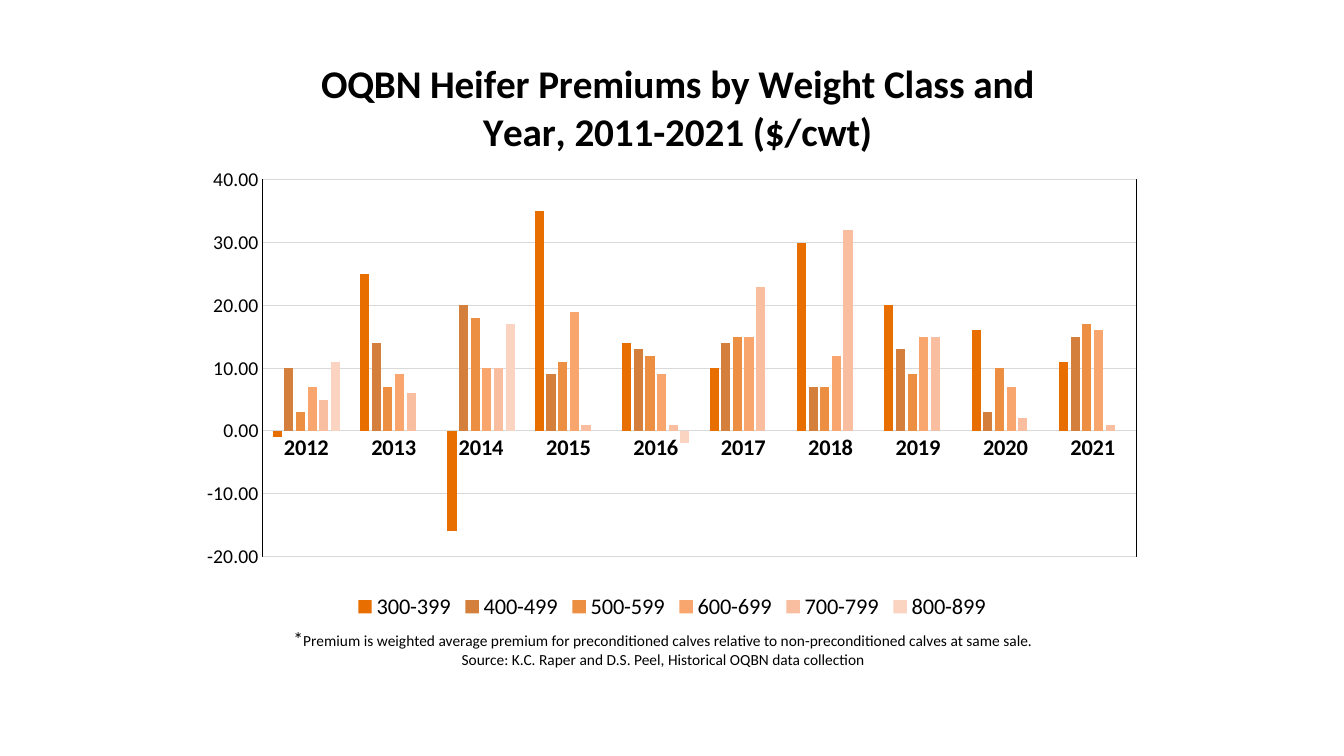
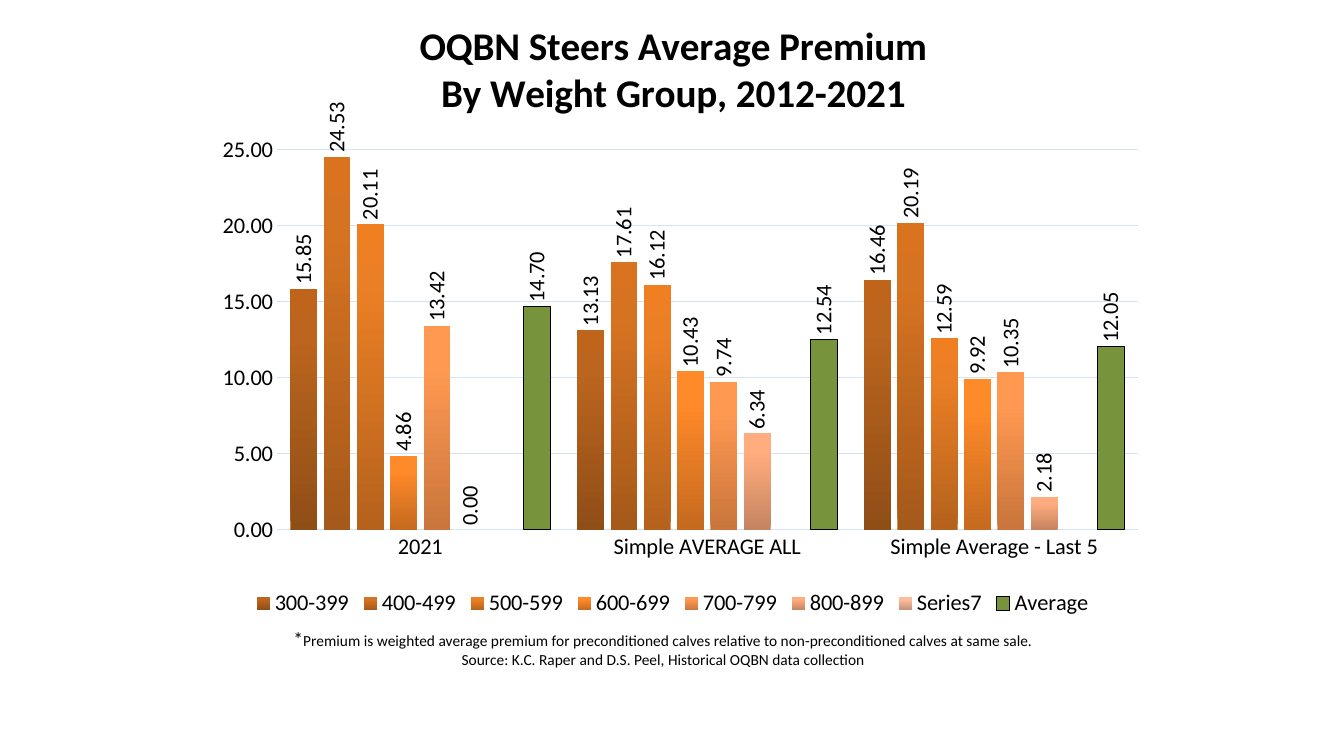
from pptx import Presentation
from pptx import util as u
from pptx.chart.data import CategoryChartData
from pptx.dml.color import RGBColor
from pptx.enum import chart as ch, text
from pptx.oxml import parse_xml
from pptx.oxml.ns import nsdecls, qn

W, H = u.Inches(13.33), u.Inches(7.5)
FONT, BLACK = "Calibri", "000000"
NOTE = ("Premium is weighted average premium for preconditioned calves "
        "relative to non-preconditioned calves at same sale.")
SOURCE = "Source: K.C. Raper and D.S. Peel, Historical OQBN data collection"

# Series: name, values, colour (three colours make a gradient, bottom to top)
HEIFERS = [
    ("300-399", (-1, 25, -16, 35, 14, 10, 30, 20, 16, 11), "E96E00"),
    ("400-499", (10, 14, 20, 9, 13, 14, 7, 13, 3, 15), "D4803C"),
    ("500-599", (3, 7, 18, 11, 12, 15, 7, 9, 10, 17), "EC8F43"),
    ("600-699", (7, 9, 10, 19, 9, 15, 12, 15, 7, 16), "F8A56E"),
    ("700-799", (5, 6, 10, 1, 1, 23, 32, 15, 2, 1), "F9BE9F"),
    ("800-899", (11, None, 17, 0, -2, None, 0, 0, None, None), "FBD3C1"),
]
STEERS = [
    ("300-399", (15.85, 13.13, 16.46), ("904E17", "BB651E", "BF651B")),
    ("400-499", (24.53, 17.61, 20.19), ("A5591A", "D67322", "DA731F")),
    ("500-599", (20.11, 16.12, 12.59), ("B5621D", "EB7F25", "F07F22")),
    ("600-699", (4.86, 10.43, 9.92), ("C56A1F", "FF8A29", "FF8B2B")),
    ("700-799", (13.42, 9.74, 10.35), ("C9753B", "FF9952", "FF9A54")),
    ("800-899", (0, 6.34, 2.18), ("C58460", "FFAC7E", "FFAD80")),
    ("Series7", (None, None, None), ("C39179", "FDBD9D", "FFBD9D")),
    ("Average", (14.7, 12.54, 12.05), "77933C"),
]


def rgb(value):
    return RGBColor.from_string(value)


def share(x, y, w, h):
    """Turn percentages of the slide into a position and a size."""
    return [int(size * pct / 100) for size, pct in zip((W, H, W, H), (x, y, w, h))]


def style(font, size, bold=False, color=BLACK):
    font.name, font.size, font.bold = FONT, u.Pt(size), bold
    font.color.rgb = rgb(color)


def stroke(line, color, width=0.75):
    line.color.rgb = rgb(color)
    line.width = u.Pt(width)


def add_run(p, words, size):
    r = p.add_run()
    r.text = words
    style(r.font, size)


def add_footnote(s):
    tf = s.shapes.add_textbox(*share(20.7, 82.25, 57.3, 6.95)).text_frame
    tf.word_wrap = True
    p = tf.paragraphs[0]
    add_run(p, "*", 14)
    add_run(p, NOTE, 11)
    add_run(tf.add_paragraph(), SOURCE, 11)
    for p in tf.paragraphs:
        p.alignment = text.PP_ALIGN.CENTER


def place(element, index, inner=False, **pcts):
    """Fix a chart part at percentages of the chart area."""
    for old in element.findall(qn("c:layout")):
        element.remove(old)
    target = '<c:layoutTarget val="inner"/>' if inner else ""
    modes = "".join(f'<c:{k}Mode val="edge"/>' for k in pcts if k in "xy")
    sizes = "".join(f'<c:{k} val="{v / 100}"/>' for k, v in pcts.items())
    element.insert(index, parse_xml(
        f'<c:layout {nsdecls("c")}><c:manualLayout>{target}{modes}{sizes}'
        '</c:manualLayout></c:layout>'))


def set_title(chart, lines, x, y):
    tf = chart.chart_title.text_frame
    for i, words in enumerate(lines):
        p = tf.add_paragraph() if i else tf.paragraphs[0]
        r = p.add_run()
        r.text = words
        style(r.font, 28, bold=True)
    place(chart.chart_title._element, 1, x=x, y=y)


def set_axes(chart, grid, value_size, bold, low, high, step):
    cat, val = chart.category_axis, chart.value_axis
    for axis in (cat, val):
        axis.major_tick_mark = axis.minor_tick_mark = ch.XL_TICK_MARK.NONE
    style(cat.tick_labels.font, 16, bold)
    stroke(cat.format.line, grid)
    style(val.tick_labels.font, value_size)
    val.tick_labels.number_format = "0.00"
    val.tick_labels.number_format_is_linked = False
    val.minimum_scale, val.maximum_scale, val.major_unit = low, high, step
    val.format.line.fill.background()
    stroke(val.major_gridlines.format.line, grid)


def fill_series(ser, color):
    ser.invert_if_negative = False
    if isinstance(color, str):
        ser.format.fill.solid()
        ser.format.fill.fore_color.rgb = rgb(color)
        return
    stops = "".join(f'<a:gs pos="{pos * 1000}"><a:srgbClr val="{c}"/></a:gs>'
                    for pos, c in zip((0, 80, 100), color))
    ser._element.get_or_add_spPr().insert(0, parse_xml(
        f'<a:gradFill {nsdecls("a")} rotWithShape="1"><a:gsLst>{stops}</a:gsLst>'
        '<a:lin ang="16200000" scaled="0"/></a:gradFill>'))


def add_labels(ser):
    """Show upright values above the bars."""
    labels = ser.data_labels
    labels.show_value = True
    labels.number_format, labels.number_format_is_linked = "0.00", False
    labels.position = ch.XL_LABEL_POSITION.OUTSIDE_END
    style(labels.font, 16)
    body = labels._element.find(qn("c:txPr")).find(qn("a:bodyPr"))
    body.set("rot", "-5400000")
    body.set("vert", "horz")


def frame_plot(chart, color):
    chart._chartSpace.chart.plotArea.append(parse_xml(
        f'<c:spPr {nsdecls("c", "a")}><a:noFill/><a:ln w="9525"><a:solidFill>'
        f'<a:srgbClr val="{color}"/></a:solidFill></a:ln></c:spPr>'))


def add_columns(s, box, cats, rows, gap, overlap, plot_area):
    data = CategoryChartData(number_format="0.00")
    data.categories = cats
    for name, values, _ in rows:
        data.add_series(name, values)
    chart = s.shapes.add_chart(ch.XL_CHART_TYPE.COLUMN_CLUSTERED,
                               *share(*box), data).chart
    style(chart.font, 10)
    plot = chart.plots[0]
    plot.vary_by_categories = False
    plot.gap_width, plot.overlap = gap, overlap
    for ser, (_, _, color) in zip(plot.series, rows):
        fill_series(ser, color)
    chart.has_legend = True
    chart.legend.position = ch.XL_LEGEND_POSITION.BOTTOM
    chart.legend.include_in_layout = False
    style(chart.legend.font, 16)
    place(chart._chartSpace.chart.plotArea, 0, inner=True,
          **dict(zip("xywh", plot_area)))
    return chart


def add_slide(prs):
    s = prs.slides.add_slide(prs.slide_layouts[6])
    add_footnote(s)
    return s


def main():
    prs = Presentation()
    prs.slide_width, prs.slide_height = W, H

    # Heifers: premiums by year
    chart = add_columns(add_slide(prs), (14, 2.67, 72, 80),
                        [str(year) for year in range(2012, 2022)], HEIFERS,
                        219, -27, (7.7, 26.4, 90.3, 62.3))
    set_title(chart, ["OQBN Heifer Premiums by Weight Class and Year, "
                      "2011-2021 ($/cwt)"], 13, 5)
    set_axes(chart, "D9D9D9", 14, True, -20, 40, 10)
    frame_plot(chart, BLACK)

    # Steers: average premiums with values
    chart = add_columns(add_slide(prs), (14.4, 0, 71.25, 82.25),
                        ["2021", "Simple AVERAGE ALL", "Simple Average - Last 5"],
                        STEERS, 100, -24, (8.7, 24.1, 89.9, 61.1))
    set_title(chart, ["OQBN Steers Average Premium",
                      "By Weight Group, 2012-2021"], 23.3, 3)
    set_axes(chart, "D4E3F4", 16, False, 0, 25, 5)
    for ser in chart.plots[0].series:
        if ser.name != "Series7":
            add_labels(ser)
    stroke(chart.plots[0].series[-1].format.line, BLACK)

    prs.save("out.pptx")


if __name__ == "__main__":
    main()
